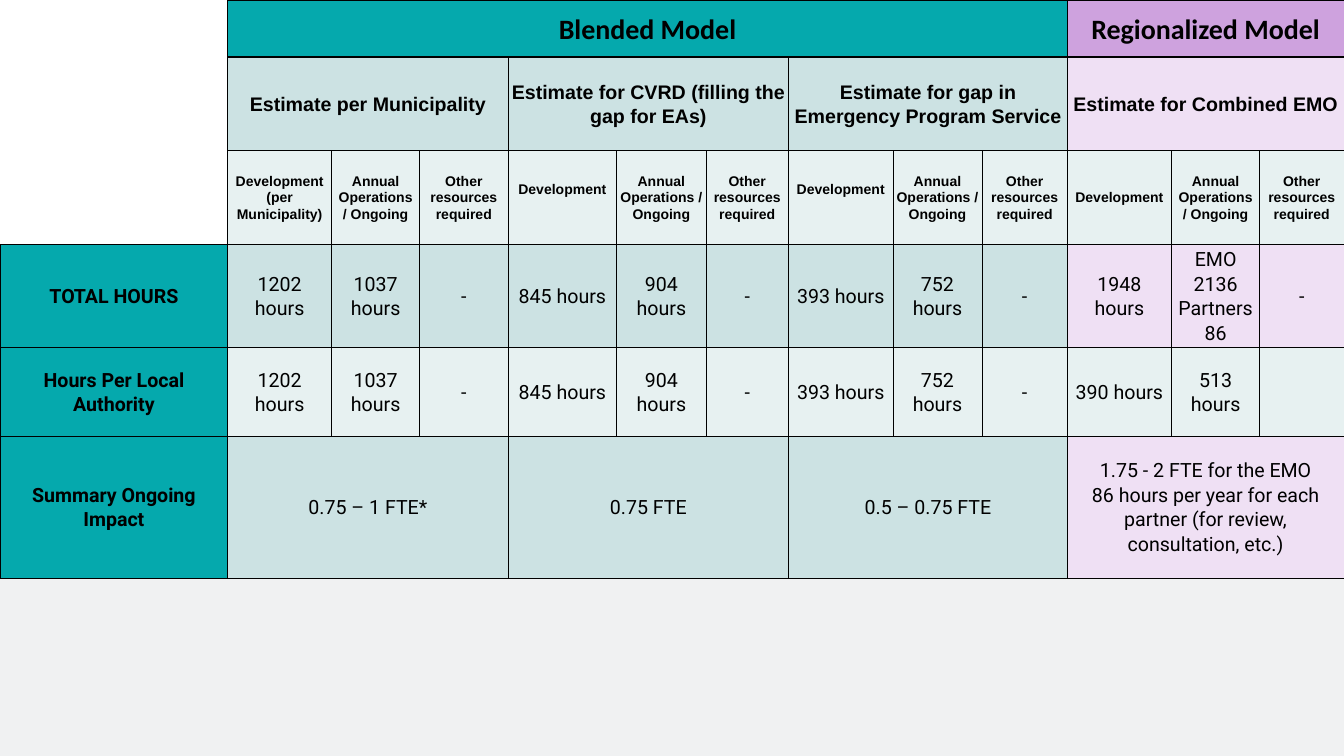
"""Build a slide with a table comparing the blended and regionalized models."""
from pptx import Presentation
from pptx.dml.color import RGBColor
from pptx.enum.text import MSO_ANCHOR, PP_ALIGN
from pptx.oxml import parse_xml
from pptx.oxml.ns import nsdecls
from pptx.util import Inches, Pt

BLACK = RGBColor(0x00, 0x00, 0x00)
WHITE = RGBColor(0xFF, 0xFF, 0xFF)
GRAY = RGBColor(0xF0, 0xF1, 0xF2)
TEAL = RGBColor(0x05, 0xA9, 0xAD)
LIGHT_TEAL = RGBColor(0xCC, 0xE2, 0xE3)
PALE_TEAL = RGBColor(0xE7, 0xF1, 0xF1)
PURPLE = RGBColor(0xCE, 0xA2, 0xDE)
PALE_PURPLE = RGBColor(0xEF, 0xE0, 0xF4)

COLUMN_WIDTHS = [4.52, 2.06, 1.75, 1.75, 2.16, 1.77, 1.64, 2.07, 1.77, 1.69, 2.07, 1.75, 1.67]
ROW_HEIGHTS = [1.13, 1.86, 1.86, 2.05, 1.76, 2.81]
HEADER_ROWS = 3
FIRST_REGIONAL_COLUMN = 10
RAISED_HEADINGS = [(2, 4), (2, 7)]

OPERATIONS = "Annual Operations / Ongoing"
RESOURCES = "Other resources required"
BLENDED_HOURS = [
    "1202 hours", "1037 hours", "-", "845 hours", "904 hours", "-", "393 hours", "752 hours", "-",
]

# Each row: label, cell texts, column spans, blended fill, regional fill, font, size, bold
ROWS = [
    ("", ["Blended Model", "Regionalized Model"], [9, 3], TEAL, PURPLE, "Calibri", 40, True),
    ("", ["Estimate per Municipality", "Estimate for CVRD (filling the gap for EAs)",
          "Estimate for gap in Emergency Program Service", "Estimate for Combined EMO"],
     [3] * 4, LIGHT_TEAL, PALE_PURPLE, "Arial", 28, True),
    ("", ["Development\n(per Municipality)", OPERATIONS, RESOURCES]
     + ["Development", OPERATIONS, RESOURCES] * 3,
     [1] * 12, PALE_TEAL, PALE_TEAL, "Arial", 20, True),
    ("TOTAL HOURS", BLENDED_HOURS + ["1948 hours", "EMO 2136\nPartners 86", "-"],
     [1] * 12, LIGHT_TEAL, PALE_PURPLE, "Roboto", 28, False),
    ("Hours Per Local Authority", BLENDED_HOURS + ["390 hours", "513 hours", ""],
     [1] * 12, PALE_TEAL, PALE_TEAL, "Roboto", 28, False),
    ("Summary Ongoing Impact",
     ["0.75 – 1 FTE*", "0.75 FTE", "0.5 – 0.75 FTE",
      "1.75 - 2 FTE for the EMO\n"
      "86 hours per year for each partner (for review, consultation, etc.)"],
     [3] * 4, LIGHT_TEAL, PALE_PURPLE, "Roboto", 28, False),
]


def style_cell(cell, fill, borders):
    properties = cell._tc.get_or_add_tcPr()
    for side, width in borders.items():
        properties.append(parse_xml(
            f'<a:ln{side} {nsdecls("a")} w="{Pt(width)}"><a:solidFill>'
            f'<a:srgbClr val="{BLACK}"/></a:solidFill></a:ln{side}>'))
    cell.fill.solid()
    cell.fill.fore_color.rgb = fill


def write_cell(cell, text, font, size, bold):
    cell.vertical_anchor = MSO_ANCHOR.MIDDLE
    cell.margin_left = cell.margin_right = Inches(0.07)
    cell.margin_top = cell.margin_bottom = 0
    cell.text = text
    for paragraph in cell.text_frame.paragraphs:
        paragraph.alignment = PP_ALIGN.CENTER
        paragraph.line_spacing = 1.07
        paragraph.font.name = font
        paragraph.font.size = Pt(size)
        paragraph.font.bold = bold
        paragraph.font.color.rgb = BLACK


deck = Presentation()
deck.slide_width = Inches(26.67)
deck.slide_height = Inches(15)
page = deck.slides.add_slide(deck.slide_layouts[6])
page.background.fill.solid()
page.background.fill.fore_color.rgb = GRAY

table = page.shapes.add_table(
    len(ROW_HEIGHTS), len(COLUMN_WIDTHS), 0, 0, Inches(26.67), Inches(11.47)).table
table.first_row = False
table.horz_banding = False
for column, width in zip(table.columns, COLUMN_WIDTHS):
    column.width = Inches(width)
for row, height in zip(table.rows, ROW_HEIGHTS):
    row.height = Inches(height)

for row_index, (label, texts, spans, blended, regional, font, size, bold) in enumerate(ROWS):
    label_cell = table.cell(row_index, 0)
    if label:
        write_cell(label_cell, label, "Roboto", 28, True)
        style_cell(label_cell, TEAL, {"L": 1, "R": 1, "T": 1, "B": 1})
    else:
        edges = {"R": 1, "B": 1} if row_index == HEADER_ROWS - 1 else {"R": 1}
        style_cell(label_cell, WHITE, edges)

    borders = {"L": 1, "R": 1, "T": 3 if row_index == 1 else 1, "B": 3 if row_index == 0 else 1}
    start = 1
    for text, span in zip(texts, spans):
        fill = regional if start >= FIRST_REGIONAL_COLUMN else blended
        for column_index in range(start, start + span):
            style_cell(table.cell(row_index, column_index), fill, borders)
        cell = table.cell(row_index, start)
        if span > 1:
            cell.merge(table.cell(row_index, start + span - 1))
        write_cell(cell, text, font, size, bold)
        start += span

for row_index, column_index in RAISED_HEADINGS:
    table.cell(row_index, column_index).margin_bottom = Inches(0.33)

deck.save("out.pptx")
